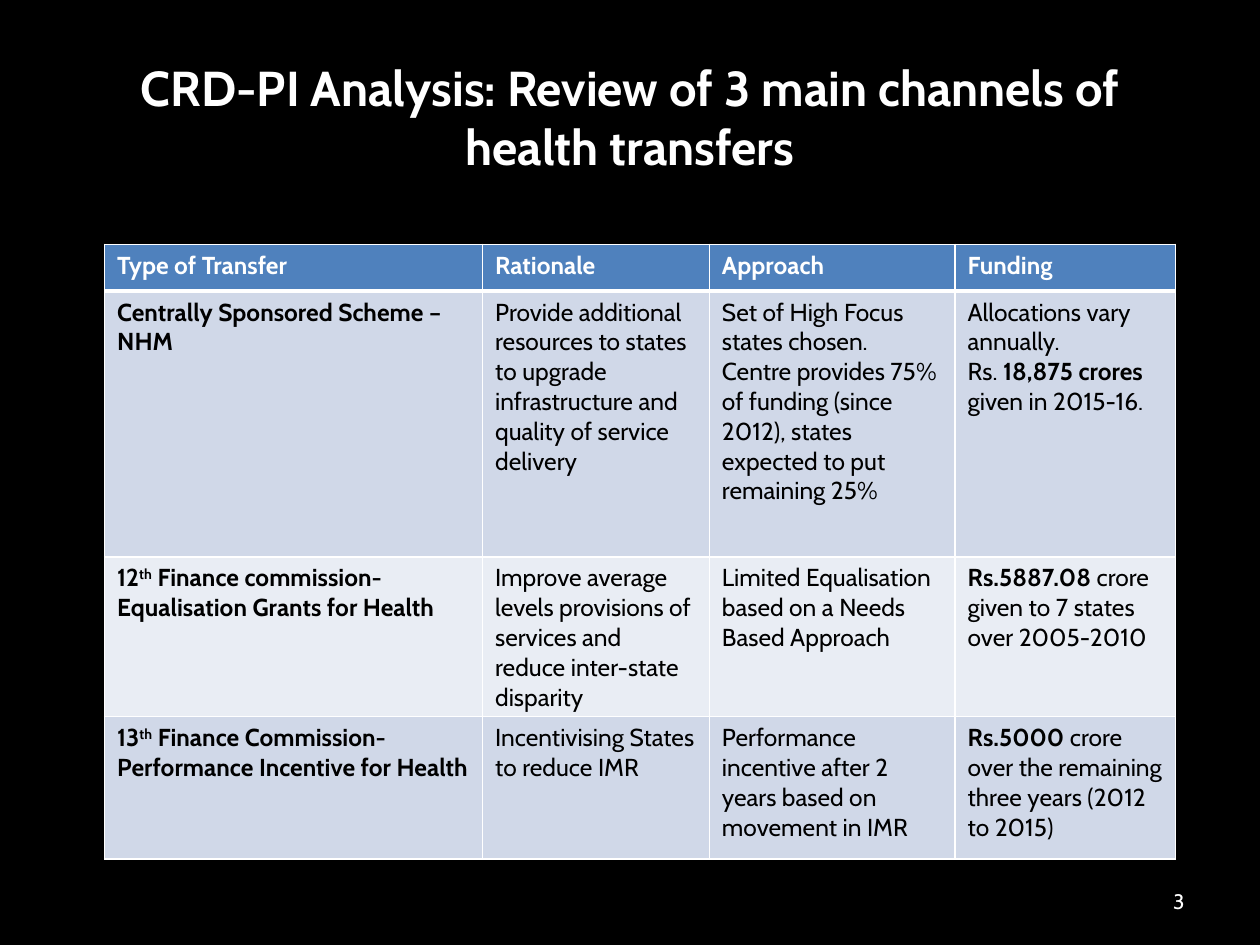
"""Build a slide with a table of the three main channels of health transfers."""
from lxml.etree import SubElement
from pptx import Presentation
from pptx.dml.color import RGBColor
from pptx.enum.text import MSO_ANCHOR, PP_ALIGN
from pptx.oxml.ns import qn
from pptx.util import Inches, Pt

FONT = "Cabin"
COLORS = {"background": "000000", "light": "FFFFFF", "dark": "000000",
          "header": "4F81BD", "odd": "D0D8E8", "even": "E9EDF4"}
TITLE = "CRD-PI Analysis: Review of 3 main channels of health transfers"
SLIDE_NUMBER = "3"
COLUMN_WIDTHS = [3, 1.8, 1.95, 1.75]
ROW_HEIGHTS = [0.37, 2.11, 1.13, 1.13]
PLAIN, BOLD, SUPER = "plain", "bold", "super"
HEADERS = ["Type of Transfer", "Rationale", "Approach", "Funding"]
BODY = [
    [
        [[("Centrally Sponsored Scheme – NHM", BOLD)]],
        [[("Provide additional resources to states to upgrade infrastructure "
           "and quality of service delivery", PLAIN)]],
        [[("Set of High Focus states chosen.", PLAIN)],
         [("Centre provides 75% of funding (since 2012), states expected to "
           "put remaining 25%", PLAIN)]],
        [[("Allocations vary annually.", PLAIN)],
         [("Rs. ", PLAIN), ("18,875 crores ", BOLD), ("given in 2015-16.", PLAIN)]],
    ],
    [
        [[("12", BOLD), ("th", SUPER),
          (" Finance commission- Equalisation Grants for Health", BOLD)]],
        [[("Improve average levels provisions of services and reduce "
           "inter-state disparity", PLAIN)]],
        [[("Limited Equalisation based on a Needs Based Approach", PLAIN)]],
        [[("Rs.5887.08", BOLD), (" crore given to 7 states over 2005-2010", PLAIN)]],
    ],
    [
        [[("13", BOLD), ("th", SUPER),
          (" Finance Commission- Performance Incentive for Health", BOLD)]],
        [[("Incentivising States to reduce IMR", PLAIN)]],
        [[("Performance incentive after 2 years based on movement in IMR", PLAIN)]],
        [[("Rs.5000", BOLD),
          (" crore over the remaining three years (2012 to 2015)", PLAIN)]],
    ],
]


def rgb(name):
    return RGBColor.from_string(COLORS[name])


def format_run(run, size, color, style=PLAIN):
    run.font.name = FONT
    run.font.size = Pt(size)
    run.font.color.rgb = rgb(color)
    run.font.bold = style != PLAIN
    if style == SUPER:
        run.font._element.set("baseline", "30000")


def fill_line(shape, text, size, alignment, style=PLAIN):
    frame = shape.text_frame
    frame.text = text
    frame.word_wrap = True
    frame.vertical_anchor = MSO_ANCHOR.MIDDLE
    frame.paragraphs[0].alignment = alignment
    format_run(frame.paragraphs[0].runs[0], size, "light", style)


def set_borders(cell, bottom_widths):
    properties = cell._tc.get_or_add_tcPr()
    top, bottom = bottom_widths
    for side, width in (("L", 1), ("R", 1), ("T", top), ("B", bottom)):
        line = SubElement(properties, qn(f"a:ln{side}"), w=str(Pt(width)))
        fill = SubElement(line, qn("a:solidFill"))
        SubElement(fill, qn("a:srgbClr"), val=COLORS["light"])


def fill_cell(cell, paragraphs, text_color, fill_color, border_widths):
    set_borders(cell, border_widths)
    cell.fill.solid()
    cell.fill.fore_color.rgb = rgb(fill_color)
    frame = cell.text_frame
    for index, runs in enumerate(paragraphs):
        paragraph = frame.add_paragraph() if index else frame.paragraphs[0]
        for text, style in runs:
            run = paragraph.add_run()
            run.text = text
            format_run(run, 14, text_color, style)


def add_transfer_table(slide):
    rows = [[[[(header, BOLD)]] for header in HEADERS]] + BODY
    table = slide.shapes.add_table(
        len(rows), len(HEADERS), Inches(0.83), Inches(1.94),
        Inches(sum(COLUMN_WIDTHS)), Inches(sum(ROW_HEIGHTS))).table
    for column, width in zip(table.columns, COLUMN_WIDTHS):
        column.width = Inches(width)
    for index, (row, height, contents) in enumerate(zip(table.rows, ROW_HEIGHTS, rows)):
        row.height = Inches(height)
        fill_color = "header" if index == 0 else "odd" if index % 2 else "even"
        text_color = "dark" if index else "light"
        border_widths = (3 if index == 1 else 1, 1 if index else 3)
        for cell, paragraphs in zip(row.cells, contents):
            fill_cell(cell, paragraphs, text_color, fill_color, border_widths)


def main():
    presentation = Presentation()
    presentation.slide_width, presentation.slide_height = Inches(10), Inches(7.5)
    slide = presentation.slides.add_slide(presentation.slide_layouts[5])
    slide.background.fill.solid()
    slide.background.fill.fore_color.rgb = rgb("background")

    title = slide.shapes.title
    title.left, title.top = Inches(0.5), Inches(0.3)
    title.width, title.height = Inches(9), Inches(1.25)
    fill_line(title, TITLE, 28, PP_ALIGN.CENTER, BOLD)

    number = slide.shapes.add_textbox(Inches(7.17), Inches(6.95), Inches(2.33), Inches(0.4))
    fill_line(number, SLIDE_NUMBER, 12, PP_ALIGN.RIGHT)
    add_transfer_table(slide)
    presentation.save("out.pptx")


if __name__ == "__main__":
    main()
